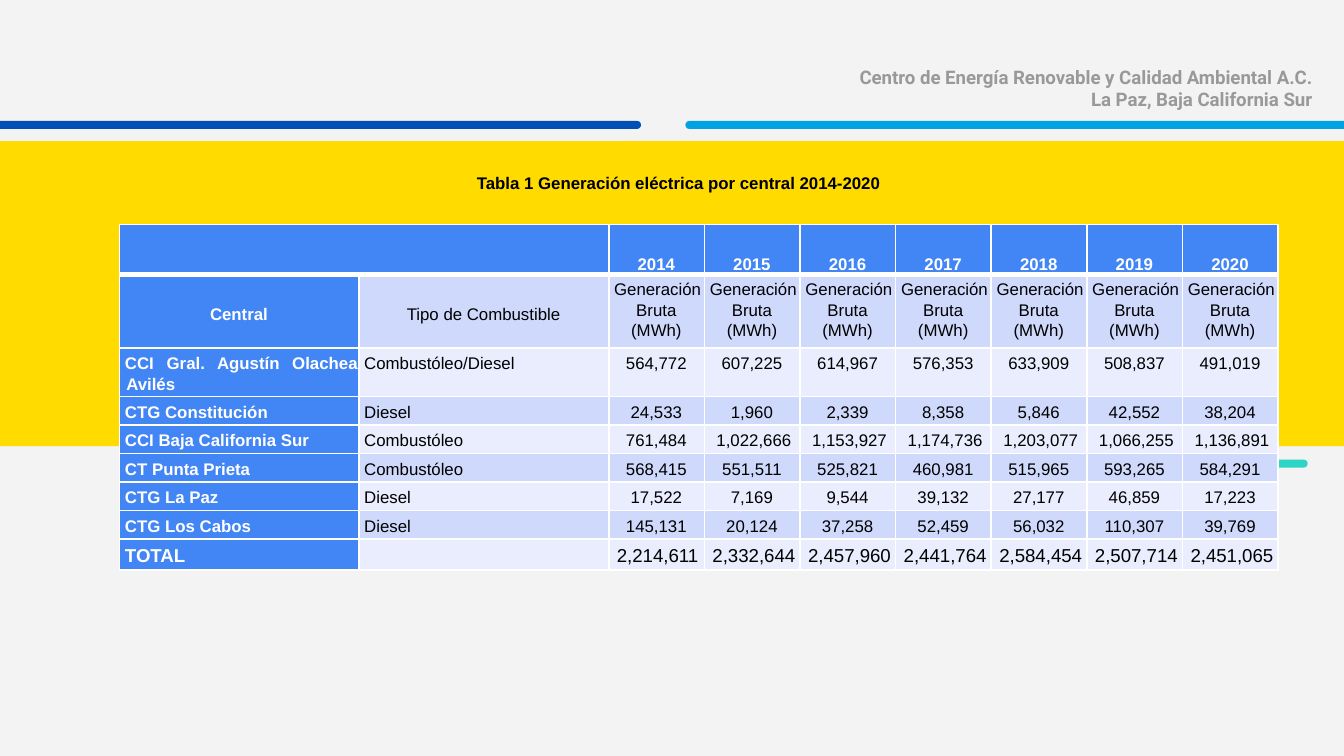
"""Build the slide with the table of electricity generation by plant, 2014-2020."""
from lxml import etree
from pptx import Presentation
from pptx.dml.color import RGBColor as Rgb
from pptx.enum.shapes import MSO_SHAPE as Shape
from pptx.enum.text import MSO_ANCHOR as Anchor, PP_ALIGN as Align
from pptx.oxml.ns import qn
from pptx.util import Inches, Pt

HUES = {
    "page": "F3F3F3", "grey": "999999", "sky": "00A3E1", "teal": "2CD5C4",
    "navy": "0050B5", "gold": "FFDB00", "head": "4285F4", "dark": "CFD9FB",
    "pale": "E9EDFD", "white": "FFFFFF", "black": "000000",
}
YEARS = [f"{year} " for year in range(2014, 2021)]
PLANTS = [
    ("CCI Gral. Agustín Olachea Avilés ", "Combustóleo/Diesel",
     "564,772 607,225 614,967 576,353 633,909 508,837 491,019"),
    ("CTG Constitución", "Diesel", "24,533 1,960 2,339 8,358 5,846 42,552 38,204"),
    ("CCI Baja California Sur", "Combustóleo",
     "761,484 1,022,666 1,153,927 1,174,736 1,203,077 1,066,255 1,136,891"),
    ("CT Punta Prieta", "Combustóleo",
     "568,415 551,511 525,821 460,981 515,965 593,265 584,291"),
    ("CTG La Paz", "Diesel", "17,522 7,169 9,544 39,132 27,177 46,859 17,223"),
    ("CTG Los Cabos", "Diesel", "145,131 20,124 37,258 52,459 56,032 110,307 39,769"),
    ("TOTAL", "",
     "2,214,611 2,332,644 2,457,960 2,441,764 2,584,454 2,507,714 2,451,065"),
]


def style(para, size, hue, bold, align, face="Arial"):
    para.alignment = align
    font = para.font
    font.name, font.size, font.bold = face, Pt(size), bold
    font.color.rgb = Rgb.from_string(HUES[hue])


def edge(cell, side, width):
    line = etree.SubElement(cell._tc.get_or_add_tcPr(), qn(f"a:ln{side}"), w=str(Pt(width)))
    fill = etree.SubElement(line, qn("a:solidFill"))
    etree.SubElement(fill, qn("a:srgbClr"), val=HUES["white"])


deck = Presentation()
deck.slide_width, deck.slide_height = Inches(10), Inches(10 * 9 / 16)
slide = deck.slides.add_slide(deck.slide_layouts[5])
slide.background.fill.solid()
slide.background.fill.fore_color.rgb = Rgb.from_string(HUES["page"])
shapes = slide.shapes

box = shapes.add_textbox(Inches(6.22), Inches(0.39), Inches(3.64), Inches(0.54))
frame = box.text_frame
frame.word_wrap = True
frame.margin_left = 0
frame.margin_top = frame.margin_right = frame.margin_bottom = Inches(0.1)
frame.text = "Centro de Energía Renovable y Calidad Ambiental A.C.\nLa Paz, Baja California Sur"
for para in frame.paragraphs:
    style(para, 10, "grey", True, Align.RIGHT, "Roboto")

for hue, kind, *place in [
    ("sky", Shape.ROUND_2_DIAG_RECTANGLE, 5.1, 0.9, 5, 0.06),
    ("teal", Shape.ROUND_2_DIAG_RECTANGLE, 1.31, 3.42, 8.42, 0.06),
    ("navy", Shape.ROUND_2_DIAG_RECTANGLE, -0.23, 0.9, 5, 0.06),
    ("gold", Shape.RECTANGLE, -0.01, 1.05, 10.02, 2.27),
]:
    bar = shapes.add_shape(kind, *map(Inches, place))
    for i in range(len(bar.adjustments)):
        bar.adjustments[i] = 0.5
    bar.shadow.inherit = False
    bar.fill.solid()
    bar.fill.fore_color.rgb = Rgb.from_string(HUES[hue])
    bar.line.fill.background()

rows = [["", ""] + YEARS,
        ["Central ", "Tipo de Combustible "] + ["Generación \nBruta \n(MWh) "] * 7]
for name, fuel, values in PLANTS:
    rows.append([name, fuel] + [v if len(v) > 7 else v + " " for v in values.split()])

widths = [1.78, 1.86] + [4.98 / 7] * 7
heights = [0.37, 0.55, 0.36] + [1.06 / 5] * 5 + [0.23]
table = shapes.add_table(len(rows), len(widths), Inches(0.89), Inches(1.67),
                         Inches(8.62), Inches(2.56)).table
table.first_row = table.horz_banding = False
for col, width in zip(table.columns, widths):
    col.width = Inches(width)
for row, height in zip(table.rows, heights):
    row.height = Inches(height)

for r, row in enumerate(rows):
    total = r == len(rows) - 1
    for c, text in enumerate(row):
        cell = table.cell(r, c)
        cell.margin_left = cell.margin_top = Inches(0.04)
        cell.margin_right, cell.margin_bottom = Inches(0.01), 0
        for side in "LRTB":
            thick = (r, side) in [(0, "B"), (1, "T")]
            edge(cell, side, 3 if thick else 1)
        head = r == 0 or c == 0
        band = "head" if head else "dark" if r % 2 else "pale"
        cell.fill.solid()
        cell.fill.fore_color.rgb = Rgb.from_string(HUES[band])
        if r == 0:
            cell.vertical_anchor = Anchor.BOTTOM
        elif r == 1 and c < 2:
            cell.vertical_anchor = Anchor.MIDDLE
        else:
            cell.vertical_anchor = Anchor.TOP
        million = c > 1 and r > 1 and len(text) > 8
        left = million or (c < 2 and r > 1)
        indent = 0.01 if not million else 0.03 if total else 0.06
        cell.text = text
        for para in cell.text_frame.paragraphs:
            align = Align.LEFT if left else Align.CENTER
            if para.text == "Generación " or (r, c) == (2, 0):
                align = Align.JUSTIFY
            props = para._p.get_or_add_pPr()
            props.set("marL", str(Inches(indent)))
            props.set("indent", str(Inches(-0.01)))
            para.line_spacing = 1.07
            style(para, 10 if total else 9, "white" if head else "black", head, align)
table.cell(0, 0).merge(table.cell(0, 1))

title = shapes.title
title.left, title.top, title.width, title.height = map(Inches, (0.27, 0.4, 9.59, 1.92))
title.text = "Tabla 1 Generación eléctrica por central 2014-2020 "
title.text_frame.vertical_anchor = Anchor.MIDDLE
style(title.text_frame.paragraphs[0], 9, "black", True, Align.CENTER)
shapes._spTree.append(title._element)

deck.save("out.pptx")
